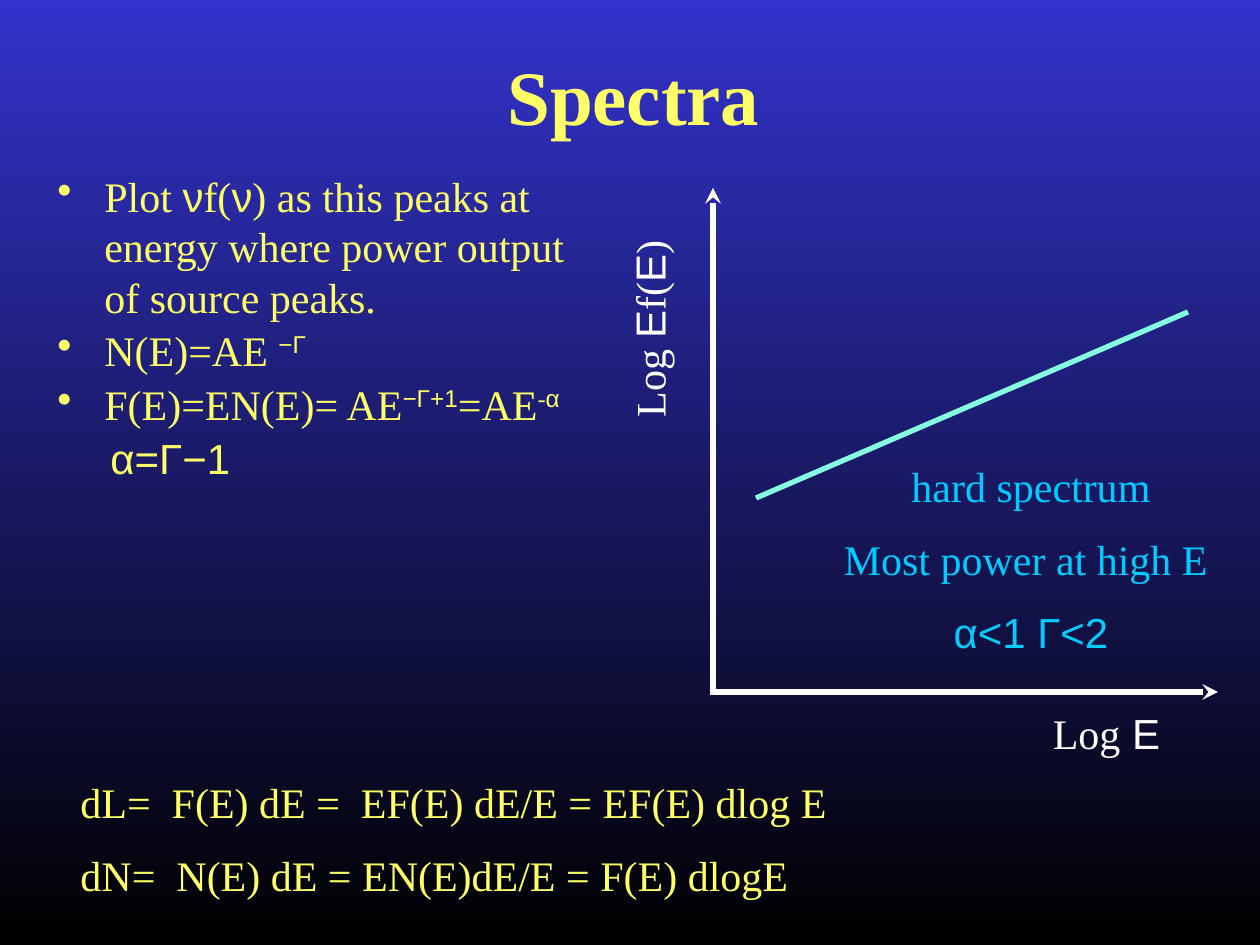
from lxml import etree
from pptx import Presentation, util as u
from pptx.dml.color import RGBColor
from pptx.enum import shapes, text
from pptx.oxml import ns

SCALE = 914400 / 126
SERIF, SANS = "Times New Roman", "Arial"
YELLOW, WHITE, CYAN, MINT = "FFFF66", "FFFFFF", "00CCFF", "85FFE0"
CENTER = {"alignment": text.PP_ALIGN.CENTER}
TIGHT = {"line_spacing": 0.9, "space_before": u.Pt(5)}
SPACED = {"space_before": u.Pt(13)}


def px(length):
    return u.Emu(round(length * SCALE))


def colour(value):
    return RGBColor.from_string(value)


def apply(target, values):
    for name, value in values.items():
        setattr(target, name, value)


def place(shape, left, top, width, height):
    apply(shape, {"left": px(left), "top": px(top), "width": px(width), "height": px(height)})


def add_runs(paragraph, runs, tint, size=24, bold=False):
    for words, face, *raised in runs:
        run = paragraph.add_run()
        run.text = words
        apply(run.font, {"name": face, "size": u.Pt(size), "bold": bold})
        run.font.color.rgb = colour(tint)
        if raised:
            run.font._element.set("baseline", "30000")


def set_indent(paragraph, left, bullet=None):
    properties = paragraph._p.get_or_add_pPr()
    properties.set("marL", str(px(left)))
    properties.set("indent", str(-px(left) if bullet else 0))
    if bullet:
        etree.SubElement(properties, ns.qn("a:buChar")).set("char", bullet)


def add_text(slide, bounds, paragraphs, tint, rotation=0):
    box = slide.shapes.add_textbox(*map(px, bounds))
    box.rotation = rotation
    box.text_frame.word_wrap = True
    for index, (runs, layout) in enumerate(paragraphs):
        paragraph = box.text_frame.add_paragraph() if index else box.text_frame.paragraphs[0]
        apply(paragraph, layout)
        add_runs(paragraph, runs, tint)
    return box


def add_line(slide, start, end, tint, head=None):
    line = slide.shapes.add_connector(shapes.MSO_CONNECTOR.STRAIGHT, *map(px, start + end))
    line.line.width = u.Pt(3)
    line.line.color.rgb = colour(tint)
    if head:
        etree.SubElement(line.line._get_or_add_ln(), ns.qn("a:tailEnd")).set("type", head)
    etree.SubElement(line._element.spPr, ns.qn("a:effectLst"))


def set_background(slide, top, bottom):
    fill = slide.background.fill
    fill.gradient()
    fill.gradient_angle = 270
    for stop, tint, position in zip(fill.gradient_stops, (top, bottom), (0, 1)):
        stop.color.rgb = colour(tint)
        stop.position = position


def add_title(slide, words):
    title = slide.shapes.title
    place(title, 98, 16, 1071, 158)
    title.text_frame.vertical_anchor = text.MSO_ANCHOR.MIDDLE
    heading = title.text_frame.paragraphs[0]
    apply(heading, CENTER)
    add_runs(heading, [(words, SERIF)], YELLOW, 44, True)


def add_formulas(slide):
    formulas = add_text(slide, (45, 164, 575, 638), [
        ([("Plot ", SERIF), ("ν", SANS), ("f(", SERIF), ("ν", SANS),
          (") as this peaks at energy where power output of source peaks.", SERIF)], {}),
        ([("N(E)=AE ", SERIF), ("−Γ", SANS, True)], TIGHT),
        ([("F(E)=EN(E)= AE", SERIF), ("−Γ+1", SANS, True), ("=AE", SERIF),
          ("-", SERIF, True), ("α", SANS, True)], TIGHT),
        ([("α=Γ−1", SANS)], TIGHT),
    ], YELLOW)
    *bulleted, relation = formulas.text_frame.paragraphs
    for paragraph in bulleted:
        set_indent(paragraph, 47, "•")
    set_indent(relation, 53)


def add_plot(slide):
    add_line(slide, (711, 692), (1218, 692), WHITE, "stealth")
    add_line(slide, (713, 695), (713, 188), WHITE, "stealth")
    add_line(slide, (1188, 312), (756, 498), MINT)
    add_text(slide, (528, 297, 243, 64), [
        ([("Log ", SERIF), ("Ε", SANS), ("f(", SERIF), ("Ε", SANS), (")", SERIF)], CENTER),
    ], WHITE, 270)
    add_text(slide, (985, 701, 243, 64), [([("Log", SERIF), (" Ε", SANS)], CENTER)], WHITE)
    add_text(slide, (823, 454, 416, 217), [
        ([("hard spectrum", SERIF)], CENTER),
        ([("Most power at high E ", SERIF)], CENTER | SPACED),
        ([("α<1 Γ<2", SANS)], CENTER | SPACED),
    ], CYAN)


def main():
    deck = Presentation()
    apply(deck, {"slide_width": px(1260), "slide_height": px(945)})
    slide = deck.slides.add_slide(deck.slide_layouts[5])
    set_background(slide, "3333CC", "000000")
    add_title(slide, "Spectra")
    add_formulas(slide)
    add_plot(slide)
    add_text(slide, (68, 780, 1152, 130), [
        ([("dL=  F(E) dE =  EF(E) dE/E = EF(E) dlog E", SERIF)], {"line_spacing": 0.8}),
        ([("dN=  N(E) dE = EN(E)dE/E = F(E) dlogE", SERIF)], SPACED),
    ], YELLOW)
    deck.save("out.pptx")


if __name__ == "__main__":
    main()
